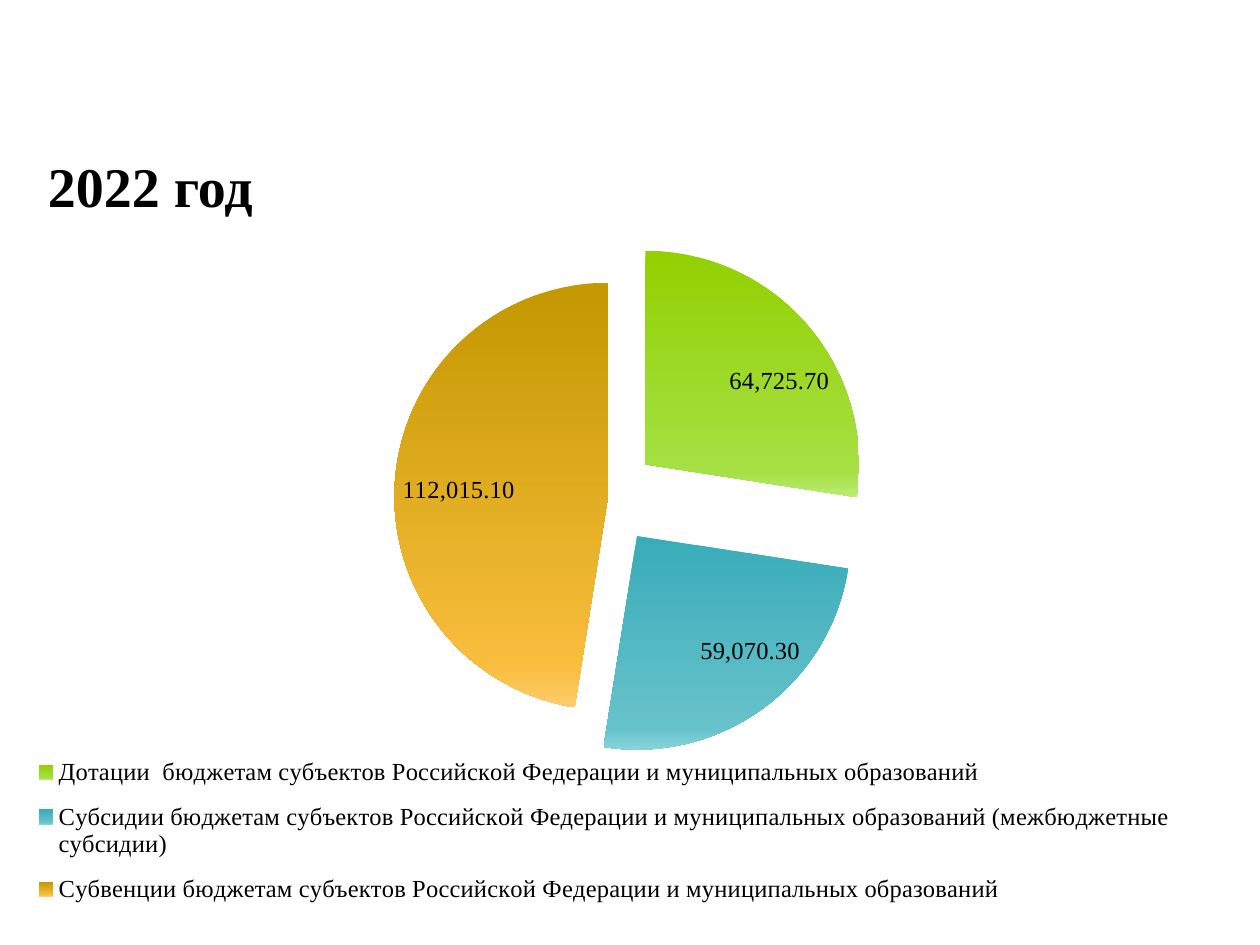
from pptx import Presentation, util as u
from pptx.chart.data import CategoryChartData
from pptx.dml.color import RGBColor
from pptx.enum import chart as ch, text
from pptx.oxml import parse_xml
from pptx.oxml.ns import nsdecls

FONT = "Times New Roman"
COLORS = {"text": "000000"}
# Top, lower and bottom shade of each slice
SHADES = {
    "grants": ("92D000", "A6E045", "B9ED70"),
    "subsidies": ("3AACB9", "66C2CB", "88D3DA"),
    "subventions": ("C39800", "F8BD3C", "FFCC6C"),
}
STOPS = (0, 90, 100)
# How far each slice is pulled out, and its label shift in percent of the chart
PULLS = (23, 23, 0)
SHIFTS = ((2.3, 5.2), (3.5, -5.3), (0, 1.4))


def style(font, **values):
    for name, value in values.items():
        setattr(font, name, value)
    font.color.rgb = RGBColor.from_string(COLORS["text"])


def layout(modes, **shares):
    """Manual chart layout, with shares in percent of the chart."""
    sizes = "".join(f'<c:{k} val="{v / 100:.3f}"/>' for k, v in shares.items())
    return parse_xml(
        f'<c:layout {nsdecls("c")}><c:manualLayout>{modes}{sizes}'
        '</c:manualLayout></c:layout>'
    )


prs = Presentation()
prs.slide_width, prs.slide_height = u.Inches(10), u.Inches(7.5)
slide = prs.slides.add_slide(prs.slide_layouts[5])

# Pie chart
data = CategoryChartData(number_format="#,##0.00")
data.categories = [
    "Дотации  бюджетам субъектов Российской Федерации и муниципальных образований",
    "Субсидии бюджетам субъектов Российской Федерации и муниципальных образований (межбюджетные субсидии)",
    "Субвенции бюджетам субъектов Российской Федерации и муниципальных образований",
]
data.add_series("Series 1", (64725.7, 59070.3, 112015.1))
box = [u.Inches(n) for n in (0.12, 1.7, 9.45, 5.67)]
chart = slide.shapes.add_chart(ch.XL_CHART_TYPE.PIE, *box, data).chart
style(chart.font, name=FONT, size=u.Pt(14))
chart.has_title = False
chart.has_legend = True
chart.legend.position = ch.XL_LEGEND_POSITION.BOTTOM
chart.legend.include_in_layout = False

# Value labels
plot = chart.plots[0]
plot.vary_by_categories = True
pie = plot.series[0]
labels = pie.data_labels
form = {
    "show_value": True,
    "show_percentage": False,
    "number_format": "#,##0.00",
    "number_format_is_linked": False,
    "position": ch.XL_LABEL_POSITION.INSIDE_END,
}
for name, value in form.items():
    setattr(labels, name, value)
style(labels.font, name=FONT, size=u.Pt(14))

# Slices: gradient from top to bottom, pull and label shift
for i, (shades, pull, (dx, dy)) in enumerate(zip(SHADES.values(), PULLS, SHIFTS)):
    point = pie.points[i]
    point.format.fill.background()
    point.format.line.fill.background()
    stops = "".join(
        f'<a:gs pos="{pos * 1000}"><a:srgbClr val="{shade}"/></a:gs>'
        for pos, shade in zip(STOPS, shades)
    )
    part = pie._element.findall("{*}dPt")[i].find("{*}spPr")
    part.replace(part[0], parse_xml(
        f'<a:gradFill {nsdecls("a")} rotWithShape="1"><a:gsLst>{stops}</a:gsLst>'
        '<a:lin ang="5400000" scaled="0"/></a:gradFill>'
    ))
    part.addprevious(parse_xml(f'<c:explosion {nsdecls("c")} val="{pull}"/>'))
    point.data_label.position = ch.XL_LABEL_POSITION.INSIDE_END
    label = pie._element.findall(".//{*}dLbl")[i]
    label.find("{*}idx").addnext(layout("", x=dx, y=dy))

# Places of plot and legend inside the chart
edge = '<c:xMode val="edge"/><c:yMode val="edge"/>'
area = chart._chartSpace.find(".//{*}plotArea")
key = chart.legend._element
for part in (area, key):
    for old in part.findall("{*}layout"):
        part.remove(old)
inner = '<c:layoutTarget val="inner"/>' + edge
area.insert(0, layout(inner, x=0.9, y=9.6, w=97.8, h=59.8))
key.find("{*}legendPos").addnext(layout(edge, x=1, y=73.8, w=97, h=25))

# Title
title = slide.shapes.title
place = {"left": 0.28, "top": 1.15, "width": 2.91, "height": 0.64}
for name, value in place.items():
    setattr(title, name, u.Inches(value))
frame = title.text_frame
frame.text = "2022 год"
frame.vertical_anchor = text.MSO_ANCHOR.TOP
frame.auto_size = text.MSO_AUTO_SIZE.NONE
frame.paragraphs[0].alignment = text.PP_ALIGN.LEFT
style(frame.paragraphs[0].runs[0].font, name=FONT, size=u.Pt(32), bold=True)

prs.save("out.pptx")
